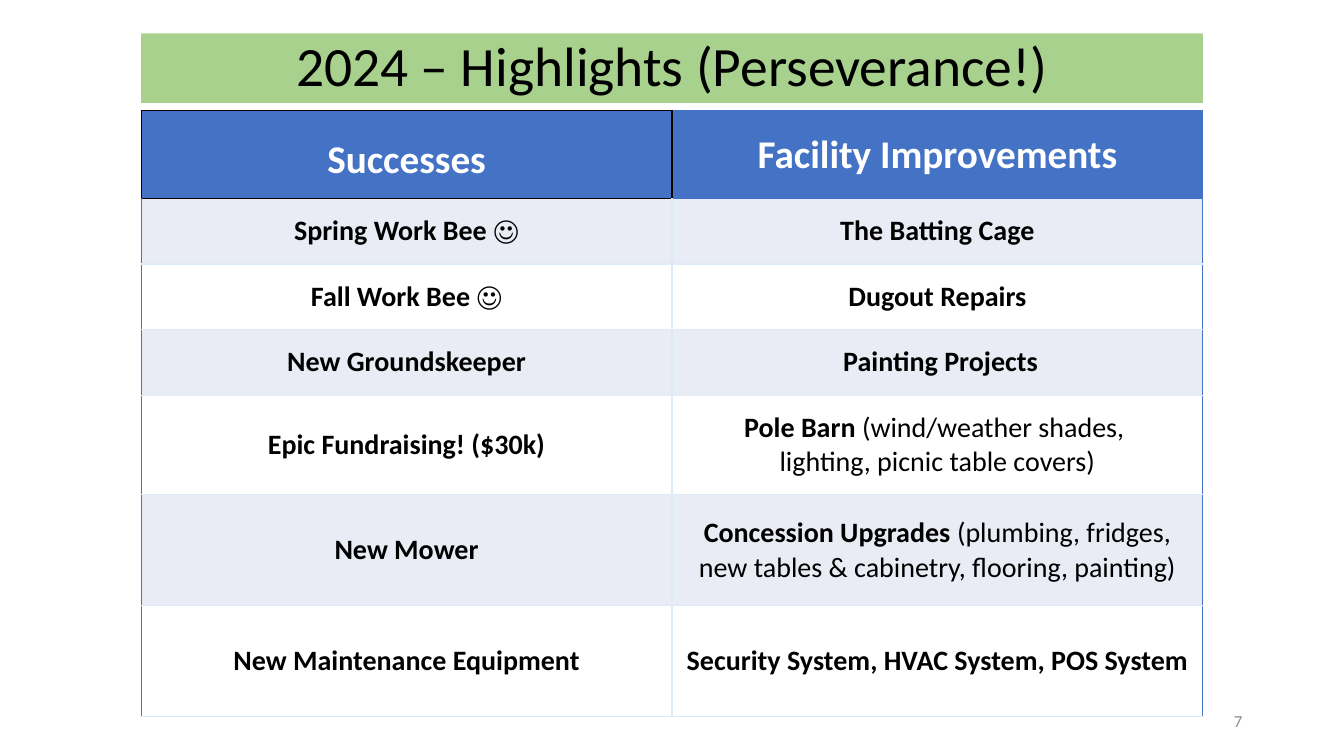
from lxml import etree
from pptx import Presentation
from pptx.dml.color import RGBColor
from pptx.enum.shapes import MSO_SHAPE
from pptx.enum.text import MSO_ANCHOR, PP_ALIGN
from pptx.oxml.ns import qn
from pptx.util import Inches, Pt

# Content: bold lead, then an optional regular part
TITLE = "2024 – Highlights (Perseverance!)"
PAGE_NUMBER = "7"
HEADINGS = ("Successes", "Facility Improvements")
HIGHLIGHTS = [
    (("Spring Work Bee ☺",), ("The Batting Cage",)),
    (("Fall Work Bee ☺",), ("Dugout Repairs",)),
    (("New Groundskeeper",), (" Painting Projects",)),
    (("Epic Fundraising! ($30k)",),
     ("Pole Barn ", "(wind/weather shades, \nlighting, picnic table covers)")),
    (("New Mower",),
     ("Concession Upgrades ",
      "(plumbing, fridges, new tables & cabinetry, flooring, painting)")),
    (("New Maintenance Equipment",),
     ("Security System, HVAC System, POS System",)),
]
ROW_HEIGHTS = (0.87, 0.65, 0.65, 0.65, 0.99, 1.1, 1.1)
LEFT, WIDTH = 1.4, 10.53

BLACK, WHITE, GREY = "000000", "FFFFFF", "8C8C8C"
GREEN, BLUE, PALE_BLUE, BAND = "A9D18E", "4472C4", "DEEBF7", "E9EBF5"


def rgb(value):
    return RGBColor.from_string(value)


def write(frame, *parts, size, color=BLACK, bold=False, align=PP_ALIGN.CENTER,
          spacing=None):
    """Write the parts as one paragraph; only the first part takes bold."""
    frame.word_wrap = True
    frame.vertical_anchor = MSO_ANCHOR.MIDDLE
    paragraph = frame.paragraphs[0]
    paragraph.alignment = align
    if spacing:
        paragraph.line_spacing = spacing
    for index, part in enumerate(parts):
        for line_index, line in enumerate(part.split("\n")):
            if line_index:
                paragraph.add_line_break()
            run = paragraph.add_run()
            run.text = line
            run.font.name = "Calibri"
            run.font.size = Pt(size)
            run.font.bold = bold and index == 0
            run.font.color.rgb = rgb(color)


def style_cell(cell, fill, left, right, top, bottom):
    """Set the four borders, then the fill."""
    properties = cell._tc.get_or_add_tcPr()
    for side, color in zip("LRTB", (left, right, top, bottom)):
        line = etree.SubElement(properties, qn(f"a:ln{side}"), w=str(Pt(1)))
        solid = etree.SubElement(line, qn("a:solidFill"))
        etree.SubElement(solid, qn("a:srgbClr"), val=color)
    cell.fill.solid()
    cell.fill.fore_color.rgb = rgb(fill)


prs = Presentation()
prs.slide_width, prs.slide_height = Inches(13.33), Inches(7.5)
slide = prs.slides.add_slide(prs.slide_layouts[6])

# Title band
title = slide.shapes.add_shape(MSO_SHAPE.RECTANGLE, Inches(LEFT), Inches(0.33),
                               Inches(WIDTH), Inches(0.69))
title.shadow.inherit = False
title.fill.solid()
title.fill.fore_color.rgb = rgb(GREEN)
title.line.fill.background()
write(title.text_frame, TITLE, size=39.6, spacing=0.9)

# Page number
page = slide.shapes.add_textbox(Inches(9.42), Inches(6.95), Inches(3), Inches(0.4))
write(page.text_frame, PAGE_NUMBER, size=12, color=GREY, align=PP_ALIGN.RIGHT)

# Highlights table
table = slide.shapes.add_table(len(ROW_HEIGHTS), len(HEADINGS), Inches(LEFT), Inches(1.1),
                               Inches(WIDTH), Inches(sum(ROW_HEIGHTS))).table
table.first_row = table.horz_banding = False
for column in table.columns:
    column.width = Inches(WIDTH / len(HEADINGS))
for row, height in zip(table.rows, ROW_HEIGHTS):
    row.height = Inches(height)

# Header row: the left cell is outlined in black and sits a little lower
for col, (heading, edge) in enumerate(zip(HEADINGS, (BLACK, BLUE))):
    cell = table.cell(0, col)
    style_cell(cell, BLUE, BLACK, edge, edge, edge)
    write(cell.text_frame, heading, size=28, color=WHITE, bold=True)
    cell.vertical_anchor = MSO_ANCHOR.MIDDLE
table.cell(0, 0).margin_top = Inches(0.15)

# Body rows: banded, with blue outer edges and pale inner lines
for row, entries in enumerate(HIGHLIGHTS, start=1):
    for col, parts in enumerate(entries):
        cell = table.cell(row, col)
        top = (BLACK, BLUE)[col] if row == 1 else PALE_BLUE
        left, right = ((BLUE, PALE_BLUE), (PALE_BLUE, BLUE))[col]
        style_cell(cell, BAND if row % 2 else WHITE, left, right, top, PALE_BLUE)
        write(cell.text_frame, *parts, size=20, bold=True)
        cell.vertical_anchor = MSO_ANCHOR.MIDDLE

prs.save("out.pptx")
